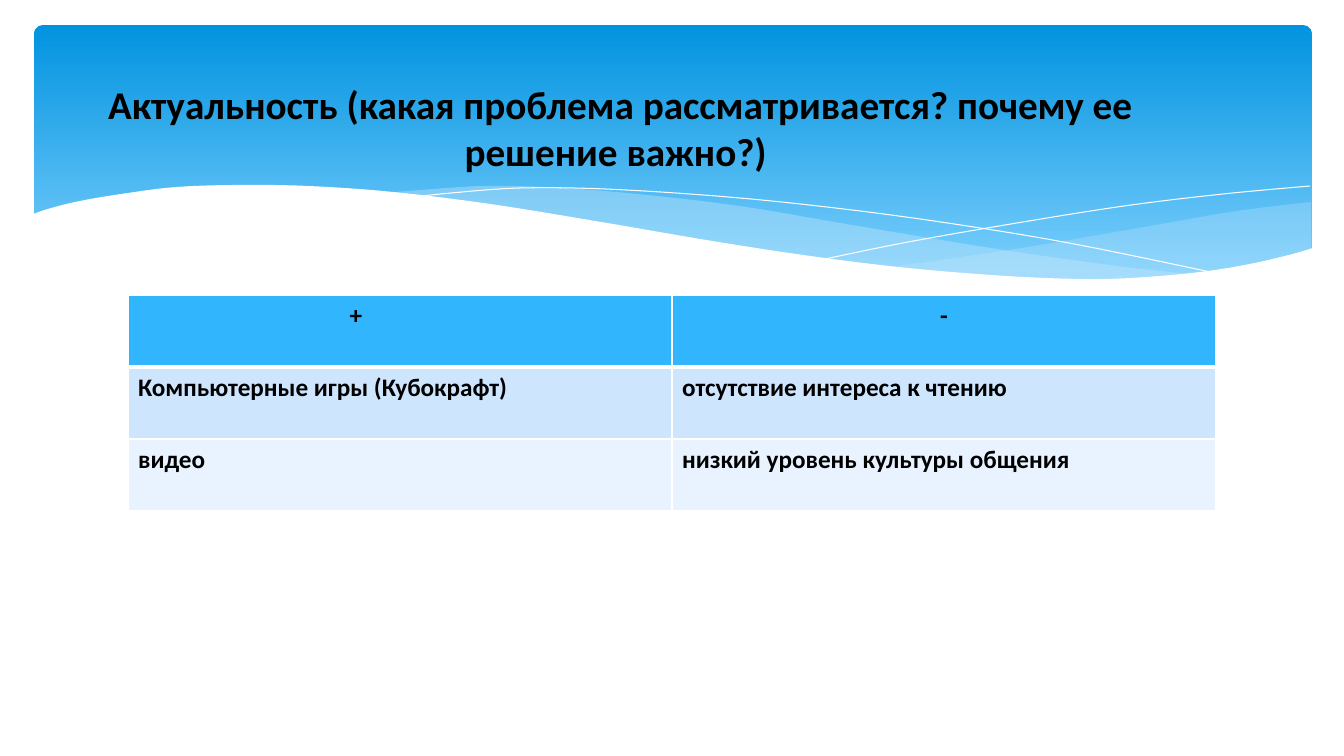
"""Build a slide with a wave banner, a heading and a table of pluses and minuses."""
from lxml import etree
from pptx import Presentation
from pptx.dml.color import RGBColor
from pptx.enum.shapes import MSO_SHAPE
from pptx.enum.text import MSO_ANCHOR, PP_ALIGN
from pptx.oxml.ns import qn
from pptx.util import Pt

PX = 914400 / 100.8
FONT = "Calibri"
BLACK = RGBColor(0x00, 0x00, 0x00)
WHITE = RGBColor(0xFF, 0xFF, 0xFF)
BANNER_TOP = RGBColor(0x02, 0x93, 0xE0)
BANNER_BOTTOM = RGBColor(0x83, 0xD3, 0xFE)
HAZE = RGBColor(0xC6, 0xE7, 0xFC)
ROW_FILLS = [
    RGBColor(0x31, 0xB6, 0xFD),
    RGBColor(0xCE, 0xE5, 0xFE),
    RGBColor(0xE8, 0xF3, 0xFF),
]


def px(value):
    return round(value * PX)


def smooth(points, steps=6):
    padded = [points[0], *points, points[-1]]
    curve = [points[0]]
    for a, b, c, d in zip(padded, padded[1:], padded[2:], padded[3:]):
        for step in range(1, steps + 1):
            t = step / steps
            curve.append(tuple(
                b[i] + (c[i] - a[i]) * t / 2
                + (2 * a[i] - 5 * b[i] + 4 * c[i] - d[i]) * t ** 2 / 2
                + (3 * b[i] - a[i] - 3 * c[i] + d[i]) * t ** 3 / 2
                for i in (0, 1)
            ))
    return curve


presentation = Presentation()
presentation.slide_width, presentation.slide_height = px(1344), px(756)
slide = presentation.slides.add_slide(presentation.slide_layouts[6])

banner = slide.shapes.add_shape(
    MSO_SHAPE.ROUNDED_RECTANGLE, px(34), px(25), px(1278), px(297))
banner.adjustments[0] = 0.03
banner.shadow.inherit = False
banner.line.fill.background()
banner.fill.gradient()
banner.fill.gradient_angle = 270
for stop, position, color in zip(
        banner.fill.gradient_stops, (0, 0.9), (BANNER_TOP, BANNER_BOTTOM)):
    stop.position = position
    stop.color.rgb = color

right_haze = smooth([
    (1311, 202), (1237, 211), (1156, 225), (1046, 244), (949, 259), (889, 267),
]) + smooth([
    (889, 267), (966, 274), (1049, 279), (1122, 279), (1194, 274), (1258, 264),
    (1311, 249),
])
left_haze = smooth([
    (1200, 275), (1125, 267), (997, 249), (846, 224), (746, 207), (657, 196),
    (564, 188), (486, 186), (421, 190), (385, 193),
]) + smooth([
    (385, 193), (460, 201), (543, 213), (604, 224), (712, 242), (808, 257),
    (894, 268), (971, 276), (1038, 279), (1113, 280), (1200, 275),
])
falling_line = smooth([
    (415, 197), (451, 193), (520, 188), (605, 189), (716, 196), (818, 206),
    (934, 221), (1069, 243), (1220, 274),
])
rising_line = smooth([
    (825, 259), (903, 243), (1005, 225), (1124, 206), (1223, 194), (1310, 186),
])
white_wave = smooth([
    (31, 215), (48, 209), (80, 201), (128, 193), (177, 187), (237, 185),
    (308, 186), (393, 192), (490, 204), (601, 222), (712, 241), (810, 256),
    (898, 267), (977, 274), (1045, 278), (1106, 279), (1160, 276), (1208, 271),
    (1250, 264), (1289, 255), (1313, 248),
]) + [(1313, 332), (31, 332)]

for outline, color, opacity in (
    (right_haze, HAZE, 29),
    (left_haze, HAZE, 40),
    (falling_line, None, None),
    (rising_line, None, None),
    (white_wave, WHITE, 100),
):
    corners = [(px(x), px(y)) for x, y in outline]
    builder = slide.shapes.build_freeform(*corners[0])
    builder.add_line_segments(corners[1:], close=color is not None)
    shape = builder.convert_to_shape()
    shape.shadow.inherit = False
    if color is None:
        shape.fill.background()
        shape.line.color.rgb = WHITE
        shape.line.width = Pt(0)
    else:
        shape.line.fill.background()
        shape.fill.solid()
        shape.fill.fore_color.rgb = color
        color_element = shape.fill._xPr.find(qn("a:solidFill"))[0]
        etree.SubElement(color_element, qn("a:alpha"), val=str(opacity * 1000))

rows = [
    ("+", "-"),
    ("Компьютерные игры (Кубокрафт)", "отсутствие интереса к чтению"),
    ("видео", "низкий уровень культуры общения"),
]
table = slide.shapes.add_table(
    3, 2, px(128), px(295), px(1088), px(216)).table
for column in table.columns:
    column.width = px(544)
for row_index, texts in enumerate(rows):
    table.rows[row_index].height = px(72)
    for column_index, text in enumerate(texts):
        cell = table.cell(row_index, column_index)
        cell.text = text
        cell.fill.solid()
        cell.fill.fore_color.rgb = ROW_FILLS[row_index]
        paragraph = cell.text_frame.paragraphs[0]
        paragraph.alignment = PP_ALIGN.LEFT if row_index else PP_ALIGN.CENTER
        paragraph.font.name = FONT
        paragraph.font.size = Pt(18)
        paragraph.font.bold = True
        paragraph.font.color.rgb = BLACK
        properties = cell._tc.get_or_add_tcPr()
        for order, side in enumerate(("lnL", "lnR", "lnT", "lnB")):
            heavy = (row_index, side) in ((0, "lnB"), (1, "lnT"))
            border = etree.Element(qn(f"a:{side}"), w=str(Pt(3 if heavy else 1)))
            fill = etree.SubElement(border, qn("a:solidFill"))
            etree.SubElement(fill, qn("a:srgbClr"), val=str(WHITE))
            properties.insert(order, border)
table.cell(0, 0).margin_right = px(98)

title = slide.shapes.add_textbox(px(72), px(50), px(1096), px(154))
title.text_frame.word_wrap = True
title.text_frame.vertical_anchor = MSO_ANCHOR.MIDDLE
paragraph = title.text_frame.paragraphs[0]
paragraph.text = "Актуальность (какая проблема рассматривается? почему ее решение важно?) "
paragraph.alignment = PP_ALIGN.CENTER
paragraph.font.name = FONT
paragraph.font.size = Pt(28)
paragraph.font.bold = True
paragraph.font.color.rgb = BLACK

presentation.save("out.pptx")
